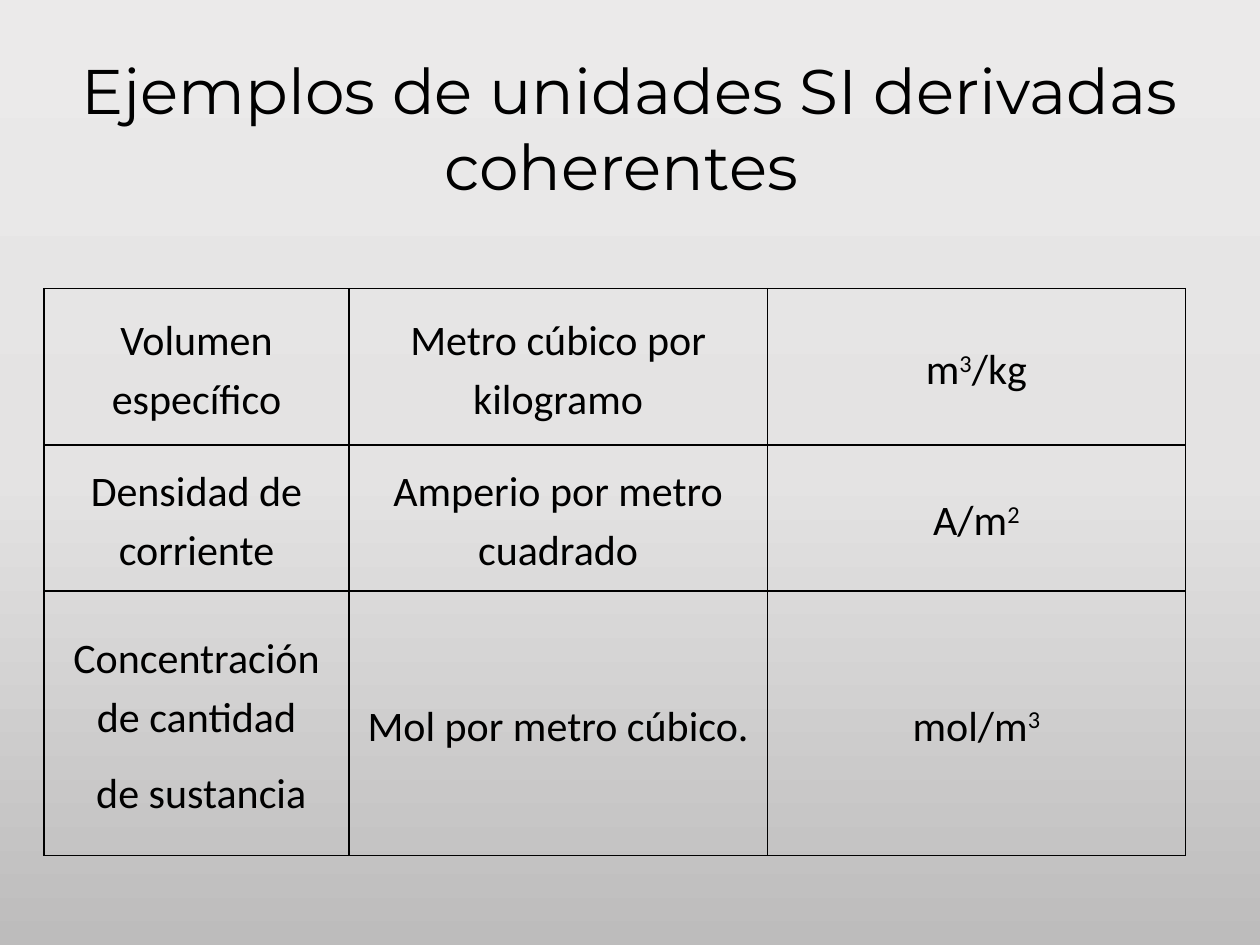
"""Build a slide with a table of coherent derived SI units."""
import copy

import lxml.etree
import pptx
import pptx.dml.color
import pptx.enum.text
import pptx.oxml
import pptx.oxml.ns
import pptx.util

Inches = pptx.util.Inches
Pt = pptx.util.Pt
CENTER = pptx.enum.text.PP_ALIGN.CENTER


def color(value):
    return pptx.dml.color.RGBColor.from_string(value)


def add_text(paragraph, runs, font_format):
    paragraph.alignment = CENTER
    for index, text in enumerate(runs):
        run = paragraph.add_run()
        run.text = text
        for name, value in font_format.items():
            setattr(run.font, name, value)
        run.font.color.rgb = color("000000")
        if index % 2:
            run.font._element.set("baseline", "30000")


presentation = pptx.Presentation()
presentation.slide_width = Inches(10)
presentation.slide_height = Inches(7.5)
slide = presentation.slides.add_slide(presentation.slide_layouts[6])

background = slide.background.fill
background.gradient()
background.gradient_angle = 270
stop_list = slide.background._cSld.find(".//" + pptx.oxml.ns.qn("a:gsLst"))
stop_list.insert(1, copy.deepcopy(stop_list[0]))
for stop, position, shade in zip(
    background.gradient_stops, (0, 0.5, 1), ("EBEAEA", "E4E3E3", "BDBCBC")
):
    stop.position = position
    stop.color.rgb = color(shade)

column_widths = (2.42, 3.32, 3.32)
row_heights = (1.24, 1.16, 2.1)
units = [
    [[["Volumen específico"]], [["Metro cúbico por kilogramo"]], [["m", "3", "/kg"]]],
    [[["Densidad de corriente"]], [["Amperio por metro cuadrado"]], [["A/m", "2"]]],
    [
        [["Concentración de cantidad"], [" de sustancia"]],
        [["Mol por metro cúbico."]],
        [["mol/m", "3"]],
    ],
]
cell_format = {
    "margin_left": Inches(0.04),
    "margin_right": Inches(0.04),
    "margin_top": Inches(0.04),
    "margin_bottom": Inches(0.04),
    "vertical_anchor": pptx.enum.text.MSO_ANCHOR.MIDDLE,
}
cell_font = {"name": "Calibri", "size": Pt(24), "bold": False}
border = (
    '<a:{} {} w="12700"><a:solidFill><a:srgbClr val="000000"/></a:solidFill></a:{}>'
)

table = slide.shapes.add_table(
    3, 3, Inches(0.35), Inches(2.29), Inches(sum(column_widths)), Inches(sum(row_heights))
).table
table.first_row = False
table.horz_banding = False
for column, width in zip(table.columns, column_widths):
    column.width = Inches(width)
for row, height, contents in zip(table.rows, row_heights, units):
    row.height = Inches(height)
    for cell, paragraphs in zip(row.cells, contents):
        for name, value in cell_format.items():
            setattr(cell, name, value)
        cell.fill.background()
        properties = cell._tc.get_or_add_tcPr()
        for index, side in enumerate(("lnL", "lnR", "lnT", "lnB")):
            line = border.format(side, pptx.oxml.ns.nsdecls("a"), side)
            properties.insert(index, pptx.oxml.parse_xml(line))
        for index, runs in enumerate(paragraphs):
            frame = cell.text_frame
            paragraph = frame.add_paragraph() if index else frame.paragraphs[0]
            paragraph.line_spacing = 1.15
            paragraph.space_after = Pt(10)
            add_text(paragraph, runs, cell_font)

title = slide.shapes.add_textbox(Inches(0.35), Inches(0.36), Inches(9.29), Inches(1.31))
title.text_frame.word_wrap = True
title.text_frame.auto_size = pptx.enum.text.MSO_AUTO_SIZE.SHAPE_TO_FIT_TEXT
add_text(
    title.text_frame.paragraphs[0],
    ["Ejemplos de unidades SI derivadas coherentes "],
    {"name": "Montserrat", "size": Pt(36)},
)

presentation.save("out.pptx")
